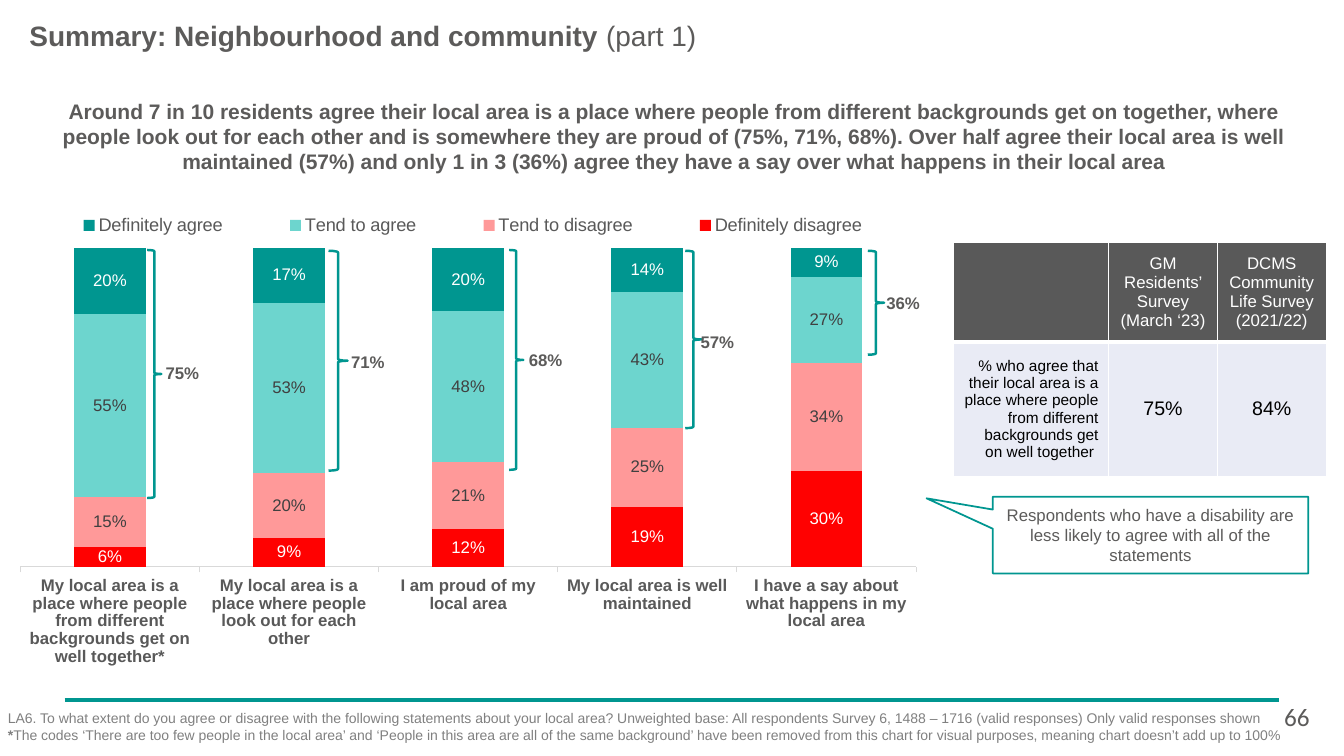
from dataclasses import dataclass

from lxml.etree import SubElement
from pptx import Presentation
from pptx.chart.data import CategoryChartData
from pptx.dml.color import RGBColor
from pptx.enum.chart import XL_CHART_TYPE as ChartType, XL_LABEL_POSITION as LabelPosition
from pptx.enum.chart import XL_LEGEND_POSITION as LegendPosition, XL_TICK_MARK as TickMark
from pptx.enum.shapes import MSO_CONNECTOR as Connector, MSO_SHAPE as Shape
from pptx.enum.text import MSO_ANCHOR as Anchor, PP_ALIGN as Align
from pptx.oxml import parse_xml
from pptx.oxml.ns import nsdecls, qn
from pptx.util import Cm, Pt


@dataclass(frozen=True)
class Theme:
    font: str = "Arial"
    number_font: str = "Calibri"
    text: str = "5C5B5A"
    muted: str = "808080"
    dark: str = "595959"
    label: str = "404040"
    teal: str = "009690"
    aqua: str = "6DD5CE"
    pink: str = "FF9999"
    red: str = "FF0101"
    axis: str = "D9D9D9"
    cell: str = "E9EBF5"
    white: str = "FFFFFF"
    black: str = "000000"
    title_size: int = 20
    number_size: int = 18
    headline_size: int = 15
    value_size: int = 14
    legend_size: int = 13
    body_size: int = 12
    row_size: int = 11
    note_size: int = 10


THEME = Theme()

TITLE = [("Summary: Neighbourhood and community ", True), ("(part 1)", False)]
HEADLINE = [(
    "Around 7 in 10 residents agree their local area is a place where people from different "
    "backgrounds get on together, where people look out for each other and is somewhere they are "
    "proud of (75%, 71%, 68%). Over half agree their local area is well maintained (57%) and only "
    "1 in 3 (36%) agree they have a say over what happens in their local area", True)]
STATEMENTS = [
    "My local area is a place where people from different backgrounds get on well together*",
    "My local area is a place where people look out for each other",
    "I am proud of my local area",
    "My local area is well maintained",
    "I have a say about what happens in my local area",
]
ANSWERS = [
    ("Definitely disagree", (0.06, 0.09, 0.12, 0.19, 0.3), THEME.red, THEME.white),
    ("Tend to disagree", (0.15, 0.2, 0.21, 0.25, 0.34), THEME.pink, THEME.label),
    ("Tend to agree", (0.55, 0.53, 0.48, 0.43, 0.27), THEME.aqua, THEME.label),
    ("Definitely agree", (0.2, 0.17, 0.2, 0.14, 0.09), THEME.teal, THEME.white),
]
AGREE_TOTALS = [
    ("75%", (3.71, 6.3, 0.36, 6.25), (3.91, 9.02, 1.37, 0.76)),
    ("71%", (8.28, 6.32, 0.48, 5.54), (8.28, 8.74, 1.98, 0.76)),
    ("68%", (12.83, 6.3, 0.36, 5.54), (12.95, 8.69, 1.6, 0.76)),
    ("57%", (17.27, 6.32, 0.41, 4.47), (17.37, 8.23, 1.42, 0.76)),
    ("36%", (21.87, 6.32, 0.41, 2.62), (22.05, 7.24, 1.42, 0.76)),
]
COMPARISON = [
    ["", "GM Residents’ Survey (March ‘23)", "DCMS Community Life Survey (2021/22)"],
    ["% who agree that their local area is a place where people from different backgrounds "
     "get on well together ", "75%", "84%"],
]
COLUMN_WIDTHS = (3.91, 2.74, 2.74)
ROW_HEIGHTS = (2.49, 3.4)
CALLOUT = [("Respondents who have a disability are less likely to agree with all of the statements", False)]
FOOTNOTE = [
    ("LA6. To what extent do you agree or disagree with the following statements about your local "
     "area? Unweighted base: All respondents Survey 6, 1488 – 1716 (valid responses) Only valid "
     "responses shown ", False),
    ("*", True),
    ("The codes ‘There are too few people in the local area’ and ‘People in this area are all of "
     "the same background’ have been removed from this chart for visual purposes, meaning chart "
     "doesn’t add up to 100%", False),
]
PAGE_NUMBER = [("66", False)]


def place(box):
    return [Cm(length) for length in box]


def style(font, size, color, bold=False, face=THEME.font):
    font.size, font.bold, font.name = Pt(size), bold, face
    font.color.rgb = RGBColor.from_string(color)


def write(frame, runs, size, color=THEME.text, align=Align.LEFT, face=THEME.font):
    frame.word_wrap = True
    paragraph = frame.paragraphs[0]
    paragraph.alignment = align
    for words, bold in runs:
        run = paragraph.add_run()
        run.text = words
        style(run.font, size, color, bold, face)
    return paragraph


def add_text(slide, box, runs, size, **options):
    frame = slide.shapes.add_textbox(*place(box)).text_frame
    write(frame, runs, size, **options)
    return frame


def outline(shape, width):
    shape.shadow.inherit = False
    shape.line.color.rgb = RGBColor.from_string(THEME.teal)
    shape.line.width = Pt(width)


def set_layout(parent, x, y, w, h, inner=False):
    target = '<c:layoutTarget val="inner"/>' if inner else ""
    lengths = "".join(f'<c:{key} val="{value}"/>' for key, value in zip("xywh", (x, y, w, h)))
    layout = parse_xml(
        f'<c:layout {nsdecls("c")}><c:manualLayout>{target}<c:xMode val="edge"/>'
        f'<c:yMode val="edge"/>{lengths}</c:manualLayout></c:layout>')
    for old in parent.findall(qn("c:layout")):
        parent.remove(old)
    return layout


def add_agreement_chart(slide):
    data = CategoryChartData(number_format="0%")
    data.categories = STATEMENTS
    for name, shares, _, _ in ANSWERS:
        data.add_series(name, shares)
    chart = slide.shapes.add_chart(
        ChartType.COLUMN_STACKED_100, *place((0.33, 4.14, 22.94, 12.85)), data).chart
    style(chart.font, THEME.note_size, THEME.black)
    chart.has_title = False
    plot = chart.plots[0]
    plot.gap_width, plot.overlap, plot.vary_by_categories = 150, 100, False
    for series, (_, _, color, label_color) in zip(plot.series, ANSWERS):
        series.format.fill.solid()
        series.format.fill.fore_color.rgb = RGBColor.from_string(color)
        labels = series.data_labels
        labels.show_value = True
        labels.number_format, labels.number_format_is_linked = "0%", False
        labels.position = LabelPosition.CENTER
        style(labels.font, THEME.body_size, label_color)

    statements = chart.category_axis
    statements.major_tick_mark = TickMark.OUTSIDE
    style(statements.tick_labels.font, THEME.body_size, THEME.dark, True)
    statements.format.line.color.rgb = RGBColor.from_string(THEME.axis)
    statements.format.line.width = Pt(0.75)
    chart.value_axis.has_major_gridlines = False
    chart.value_axis.visible = False

    chart.has_legend = True
    legend = chart.legend
    legend.position, legend.include_in_layout = LegendPosition.CORNER, False
    style(legend.font, THEME.legend_size, THEME.dark)
    legend_xml = legend._element
    legend_xml.find(qn("c:legendPos")).addnext(set_layout(legend_xml, 0.01, 0.09, 0.99, 0.06))
    plot_xml = plot._element.getparent()
    plot_xml.insert(0, set_layout(plot_xml, 0.008, 0.164, 0.984, 0.625, inner=True))


def set_borders(cell, bottom_width):
    properties = cell._tc.get_or_add_tcPr()
    widths = {"lnL": 1, "lnR": 1, "lnT": 1, "lnB": bottom_width}
    for position, (side, width) in enumerate(widths.items()):
        border = parse_xml(f'<a:{side} {nsdecls("a")} w="{Pt(width)}"/>')
        fill = SubElement(border, qn("a:solidFill"))
        SubElement(fill, qn("a:srgbClr"), val=THEME.white)
        properties.insert(position, border)


def add_comparison(slide):
    size = (sum(COLUMN_WIDTHS), sum(ROW_HEIGHTS))
    table = slide.shapes.add_table(2, 3, *place((24.03, 6.12, *size))).table
    for column, width in zip(table.columns, COLUMN_WIDTHS):
        column.width = Cm(width)
    for r, (row, height) in enumerate(zip(COMPARISON, ROW_HEIGHTS)):
        table.rows[r].height = Cm(height)
        for c, words in enumerate(row):
            cell = table.cell(r, c)
            cell.vertical_anchor = Anchor.MIDDLE
            cell.fill.solid()
            cell.fill.fore_color.rgb = RGBColor.from_string(THEME.cell if r else THEME.dark)
            set_borders(cell, 1 if r else 3)
            row_size = THEME.value_size if c else THEME.row_size
            if words:
                write(cell.text_frame, [(words, False)], row_size if r else THEME.body_size,
                      THEME.black if r else THEME.white,
                      Align.RIGHT if c == 0 else Align.CENTER)


def main():
    deck = Presentation()
    deck.slide_width, deck.slide_height = Cm(33.87), Cm(19.05)
    slide = deck.slides.add_slide(deck.slide_layouts[5])

    rule = slide.shapes.add_connector(Connector.STRAIGHT, *place((1.63, 17.63, 32.23, 17.63)))
    rule.line.color.rgb = RGBColor.from_string(THEME.teal)
    rule.line.width = Pt(3)
    SubElement(rule._element.spPr, qn("a:effectLst"))

    title = slide.shapes.title
    title.left, title.top, title.width, title.height = place((0.74, 0.46, 29.21, 0.86))
    heading = title.text_frame
    heading.margin_left = heading.margin_right = heading.margin_top = heading.margin_bottom = 0
    heading.vertical_anchor = Anchor.MIDDLE
    write(heading, TITLE, THEME.title_size)

    add_text(slide, (1.04, 2.36, 31.9, 2.18), HEADLINE, THEME.headline_size, align=Align.CENTER)
    add_agreement_chart(slide)
    for total, brace_box, total_box in AGREE_TOTALS:
        brace = slide.shapes.add_shape(Shape.RIGHT_BRACE, *place(brace_box))
        brace.fill.background()
        outline(brace, 1.75)
        frame = add_text(slide, total_box, [(total, True)], THEME.body_size, align=Align.CENTER)
        frame.word_wrap = False
    add_comparison(slide)

    callout = slide.shapes.add_shape(Shape.RECTANGULAR_CALLOUT, *place((25.02, 12.52, 7.95, 1.93)))
    callout.adjustments[0], callout.adjustments[1] = -0.71, -0.48
    callout.fill.solid()
    callout.fill.fore_color.rgb = RGBColor.from_string(THEME.white)
    outline(callout, 1.25)
    callout.text_frame.vertical_anchor = Anchor.MIDDLE
    remark = write(callout.text_frame, CALLOUT, THEME.body_size, align=Align.CENTER)
    remark.space_after = Pt(4)

    add_text(slide, (-0.05, 17.75, 32.79, 1.42), FOOTNOTE, THEME.note_size, color=THEME.muted)
    add_text(slide, (32.11, 17.55, 1.35, 1.02), PAGE_NUMBER, THEME.number_size,
             face=THEME.number_font)
    deck.save("out.pptx")


if __name__ == "__main__":
    main()
